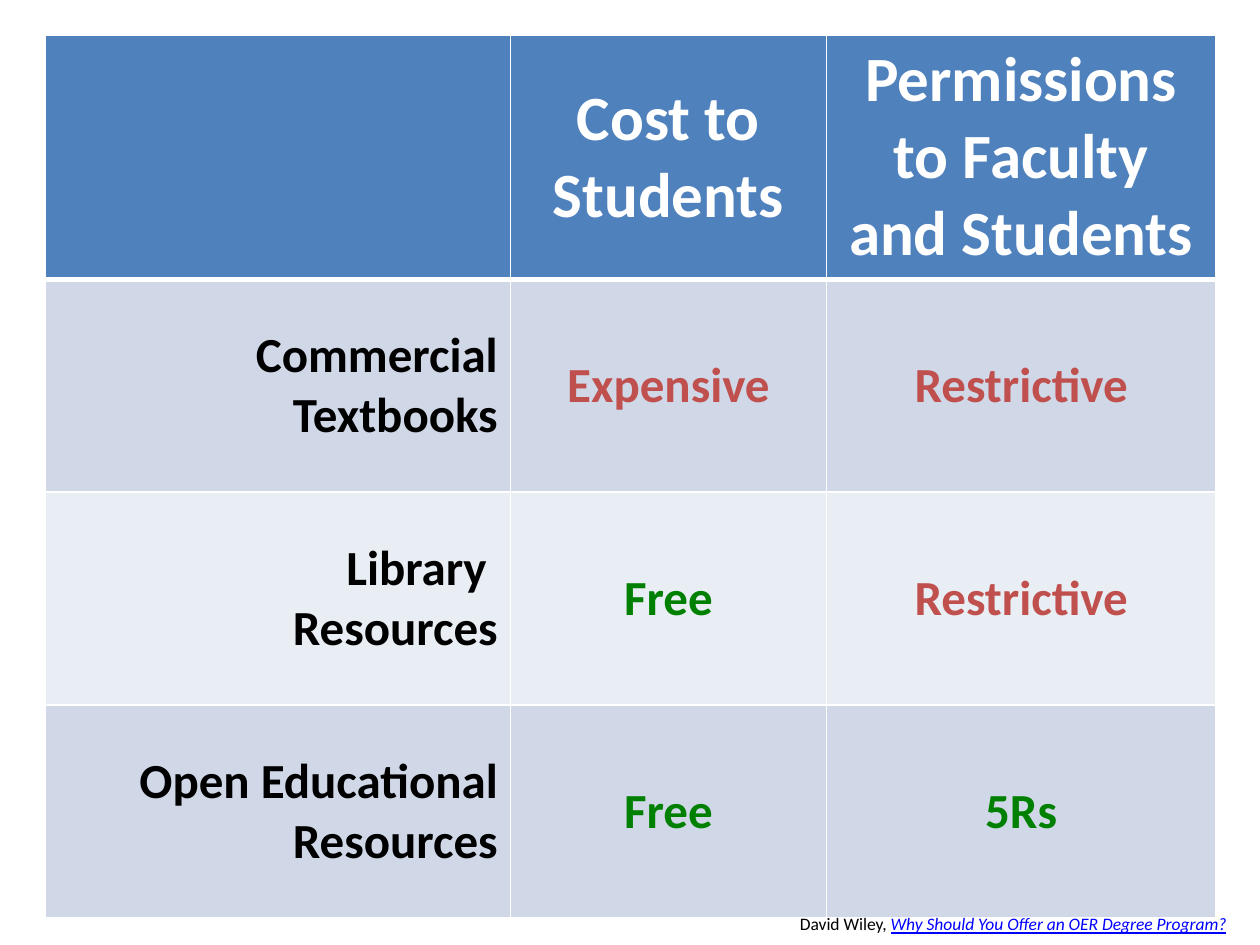
from lxml import etree
from pptx import Presentation
from pptx.dml.color import RGBColor
from pptx.enum.text import MSO_ANCHOR, PP_ALIGN
from pptx.oxml.ns import qn
from pptx.util import Inches, Pt

CENTER, RIGHT, MIDDLE = PP_ALIGN.CENTER, PP_ALIGN.RIGHT, MSO_ANCHOR.MIDDLE
FONT = "Calibri"
WHITE, BLACK, BLUE = "FFFFFF", "000000", "4F81BD"
RED, GREEN, LINK = "C0504D", "008000", "0000FF"
BANDS = ["D0D8E8", "E9EDF4"]


def style(r, size, color, bold=False):
    r.font.name = FONT
    r.font.size = Pt(size)
    r.font.bold = bold
    r.font.color.rgb = RGBColor.from_string(color)


def add_border(cell, side, width):
    ln = etree.SubElement(cell._tc.get_or_add_tcPr(), qn("a:" + side), w=str(Pt(width)))
    fill = etree.SubElement(ln, qn("a:solidFill"))
    etree.SubElement(fill, qn("a:srgbClr"), val=WHITE)


prs = Presentation()
prs.slide_width, prs.slide_height = Inches(10), Inches(7.5)
s = prs.slides.add_slide(prs.slide_layouts[6])

# Comparison table
rows = [
    ["", "Cost to Students", "Permissions to Faculty and Students"],
    ["Commercial Textbooks", "Expensive", "Restrictive"],
    ["Library \nResources", "Free", "Restrictive"],
    ["Open Educational Resources", "Free", "5Rs"],
]
answer_colors = {"Expensive": RED, "Restrictive": RED, "Free": GREEN, "5Rs": GREEN}
col_widths = [3.69, 2.51, 3.09]
row_heights = [1.92] + [1.69] * 3

table = s.shapes.add_table(
    len(rows), len(col_widths), Inches(0.36), Inches(0.28),
    Inches(sum(col_widths)), Inches(sum(row_heights))).table
for col, width in zip(table.columns, col_widths):
    col.width = Inches(width)

for i, texts in enumerate(rows):
    table.rows[i].height = Inches(row_heights[i])
    for j, text in enumerate(texts):
        cell = table.cell(i, j)
        for side in ("lnL", "lnR", "lnT", "lnB"):
            heavy = (i, side) in [(0, "lnB"), (1, "lnT")]
            add_border(cell, side, 3 if heavy else 1)
        cell.fill.solid()
        cell.fill.fore_color.rgb = RGBColor.from_string(BANDS[(i - 1) % 2] if i else BLUE)
        cell.vertical_anchor = MIDDLE
        cell.text_frame.text = text
        color = answer_colors.get(text, BLACK) if i else WHITE
        for p in cell.text_frame.paragraphs:
            p.alignment = RIGHT if i and j == 0 else CENTER
            for r in p.runs:
                style(r, 28 if i else 36, color, bold=True)

# Source credit
tf = s.shapes.add_textbox(Inches(2.14), Inches(7.2), Inches(7.69), Inches(0.27)).text_frame
tf.word_wrap = True
p = tf.paragraphs[0]
p.alignment = RIGHT
credit = [("David Wiley, ", BLACK), ("Why Should You Offer an OER Degree Program?", LINK)]
for text, color in credit:
    r = p.add_run()
    r.text = text
    style(r, 10, color)
    r.font.italic = r.font.underline = color == LINK

prs.save("out.pptx")
